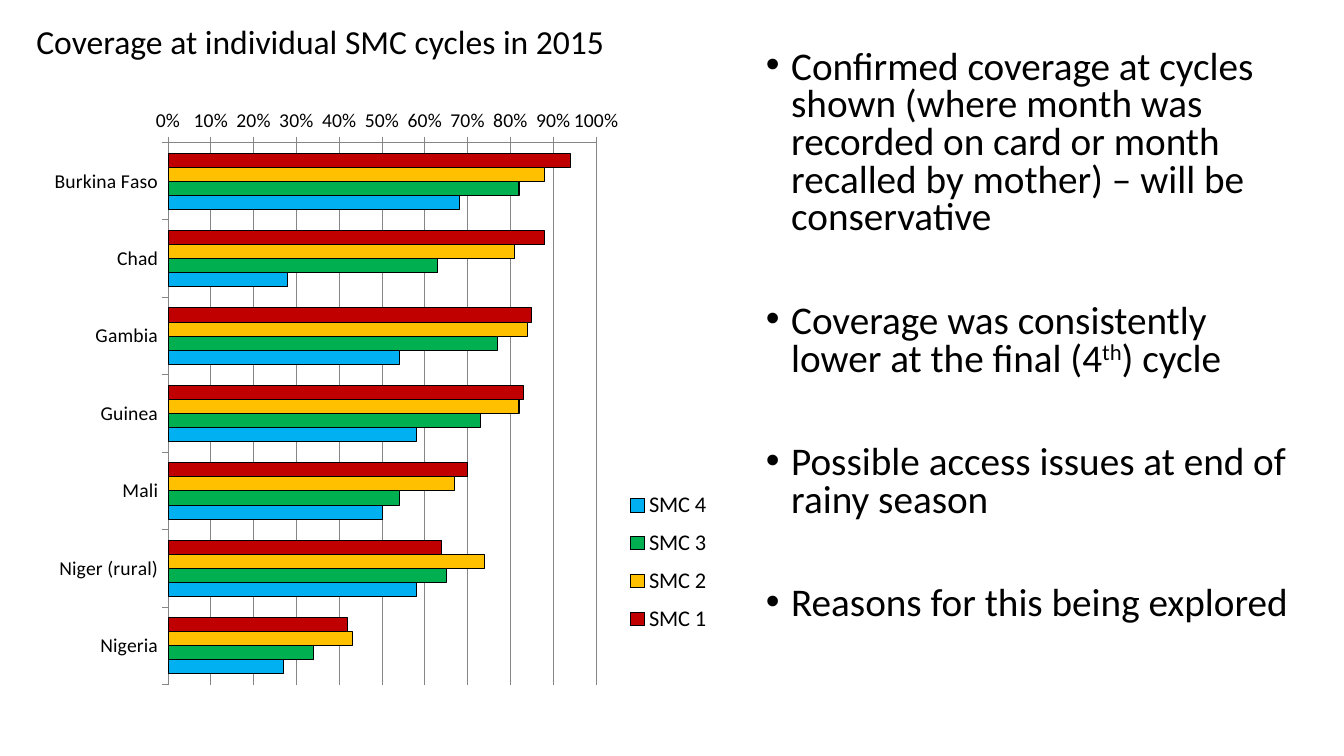
from lxml.etree import SubElement
from pptx import Presentation
from pptx.chart.data import CategoryChartData
from pptx.dml.color import RGBColor
from pptx.enum.chart import XL_CHART_TYPE, XL_LEGEND_POSITION, XL_TICK_MARK
from pptx.enum.text import MSO_ANCHOR, MSO_AUTO_SIZE, PP_ALIGN
from pptx.oxml import parse_xml
from pptx.oxml.ns import nsdecls, qn
from pptx.util import Cm, Pt

FONT = "Calibri"
BLACK = "000000"
GREY = "868686"

COUNTRIES = ["Burkina Faso", "Chad", "Gambia", "Guinea", "Mali", "Niger (rural)", "Nigeria"]
CYCLES = [
    ("SMC 1", "C00000", [0.94, 0.88, 0.85, 0.83, 0.70, 0.64, 0.42]),
    ("SMC 2", "FFC000", [0.88, 0.81, 0.84, 0.82, 0.67, 0.74, 0.43]),
    ("SMC 3", "00B050", [0.82, 0.63, 0.77, 0.73, 0.54, 0.65, 0.34]),
    ("SMC 4", "00B0F0", [0.68, 0.28, 0.54, 0.58, 0.50, 0.58, 0.27]),
]
FINDINGS = [
    [("Confirmed coverage at cycles shown (where month was recorded on card "
      "or month recalled by mother) – will be conservative", False)],
    [("Coverage was consistently lower at the final (4", False), ("th", True), (") cycle", False)],
    [("Possible access issues at end of rainy season", False)],
    [("Reasons for this being explored", False)],
]


def color(value):
    return RGBColor.from_string(value)


def style_font(font, size):
    font.name = FONT
    font.size = Pt(size)
    font.color.rgb = color(BLACK)


def style_line(line, value):
    line.color.rgb = color(value)
    line.width = Pt(0.75)


def add_span(para, text, size, raised=False):
    span = para.add_run()
    span.text = text
    style_font(span.font, size)
    if raised:
        span._r.get_or_add_rPr().set("baseline", "30000")


def add_title(page, left, top, width, height):
    title = page.shapes.title
    title.left, title.top, title.width, title.height = left, top, width, height
    frame = title.text_frame
    frame.auto_size = MSO_AUTO_SIZE.NONE
    frame.vertical_anchor = MSO_ANCHOR.TOP
    para = frame.paragraphs[0]
    para.alignment = PP_ALIGN.LEFT
    add_span(para, "Coverage at individual SMC cycles in 2015", 24)


def set_layout(parent, position, x, y, width, height, inner=False):
    for old in parent.findall(qn("c:layout")):
        parent.remove(old)
    layout = parse_xml(f"<c:layout {nsdecls('c')}><c:manualLayout/></c:layout>")
    settings = [("layoutTarget", "inner")] if inner else []
    settings += [("xMode", "edge"), ("yMode", "edge"),
                 ("x", x), ("y", y), ("w", width), ("h", height)]
    for name, value in settings:
        SubElement(layout[0], qn(f"c:{name}")).set("val", str(value))
    parent.insert(position, layout)


def add_coverage_chart(page, left, top, width, height):
    data = CategoryChartData(number_format="0%")
    data.categories = COUNTRIES
    for name, _, values in CYCLES:
        data.add_series(name, values)
    frame = page.shapes.add_chart(XL_CHART_TYPE.BAR_CLUSTERED, left, top, width, height, data)
    chart = frame.chart
    chart.has_title = False
    style_font(chart.font, 10)

    plot = chart.plots[0]
    plot.gap_width = 150
    plot.overlap = 0
    plot.vary_by_categories = False
    for series, (_, fill, _) in zip(plot.series, CYCLES):
        series.invert_if_negative = False
        series.format.fill.solid()
        series.format.fill.fore_color.rgb = color(fill)
        style_line(series.format.line, BLACK)

    for axis in (chart.category_axis, chart.value_axis):
        axis.major_tick_mark = XL_TICK_MARK.OUTSIDE
        axis.minor_tick_mark = XL_TICK_MARK.NONE
        style_font(axis.tick_labels.font, 14)
        style_line(axis.format.line, GREY)
    chart.category_axis.reverse_order = True
    chart.category_axis.has_major_gridlines = False

    scale = chart.value_axis
    scale.minimum_scale, scale.maximum_scale, scale.major_unit = 0, 1, 0.1
    scale.has_major_gridlines = True
    style_line(scale.major_gridlines.format.line, GREY)
    scale.tick_labels.number_format = "0%"
    scale.tick_labels.number_format_is_linked = False

    chart.has_legend = True
    legend = chart.legend
    legend.position = XL_LEGEND_POSITION.RIGHT
    legend.include_in_layout = False
    style_font(legend.font, 16)

    plot_area = chart._chartSpace.chart.plotArea
    set_layout(plot_area, 0, 0.184, 0.075, 0.621, 0.904, inner=True)
    set_layout(legend._element, 1, 0.84, 0.64, 0.14, 0.27)


def add_findings(page, left, top, width, height):
    box = page.shapes.add_textbox(left, top, width, height)
    frame = box.text_frame
    frame.word_wrap = True
    for index, spans in enumerate(FINDINGS):
        para = frame.add_paragraph() if index else frame.paragraphs[0]
        properties = para._p.get_or_add_pPr()
        properties.set("marL", str(Cm(0.64)))
        properties.set("indent", str(-Cm(0.64)))
        SubElement(properties, qn("a:buFont")).set("typeface", "Arial")
        SubElement(properties, qn("a:buChar")).set("char", "•")
        para.line_spacing = 0.8
        if index:
            para.space_before = Pt(47)
        for text, raised in spans:
            add_span(para, text, 28, raised)


def main():
    deck = Presentation()
    deck.slide_width, deck.slide_height = Cm(33.87), Cm(19.05)
    page = deck.slides.add_slide(deck.slide_layouts[5])
    add_title(page, Cm(0.66), Cm(0.41), Cm(17.75), Cm(1.27))
    add_coverage_chart(page, Cm(1.04), Cm(2.46), Cm(17.37), Cm(15.11))
    add_findings(page, Cm(19.05), Cm(1.14), Cm(13.84), Cm(16))
    deck.save("out.pptx")


if __name__ == "__main__":
    main()
